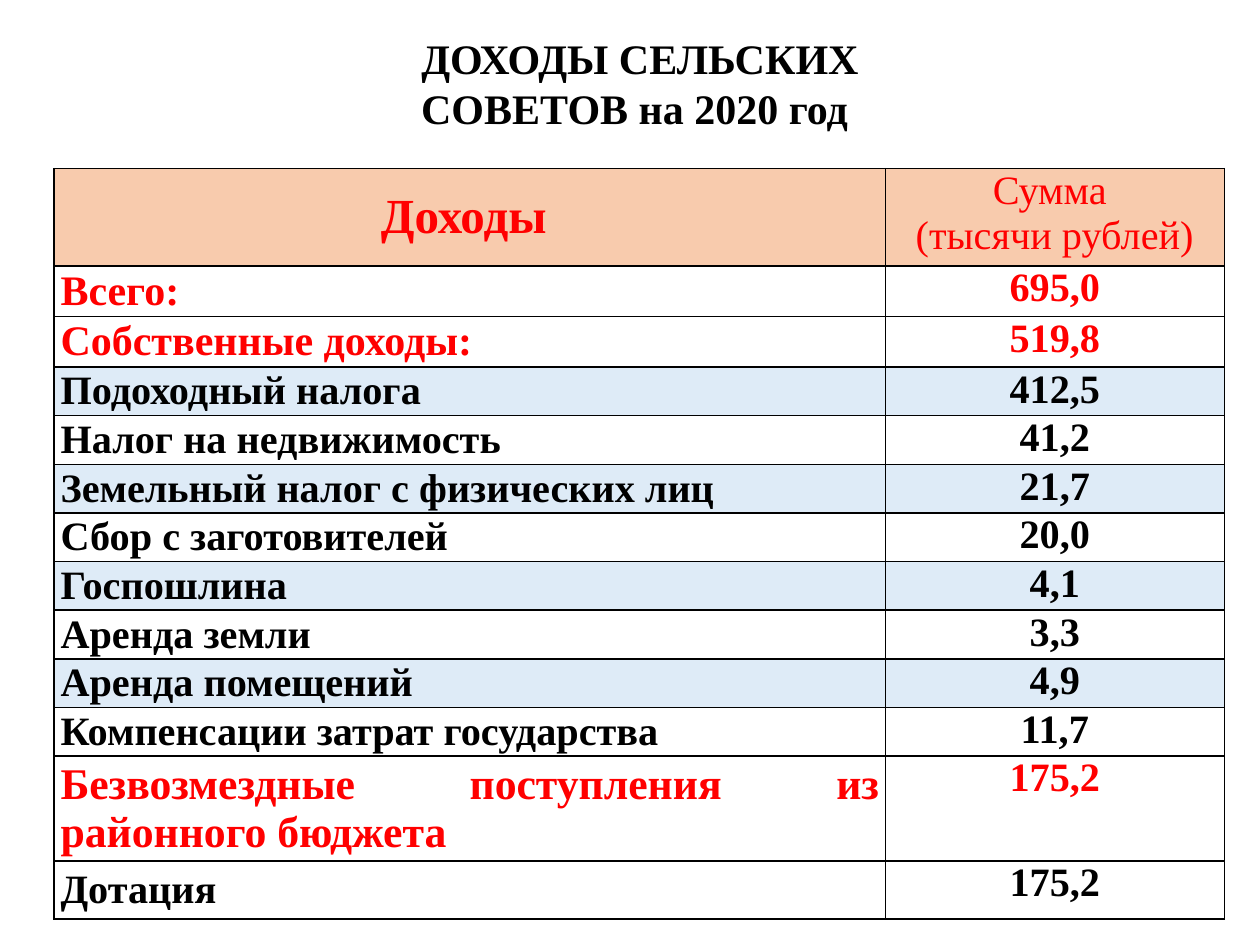
from dataclasses import dataclass

from lxml import etree
from pptx import Presentation
from pptx.dml.color import RGBColor
from pptx.enum.text import MSO_ANCHOR, MSO_AUTO_SIZE, PP_ALIGN
from pptx.oxml.ns import qn
from pptx.util import Cm, Pt

CENTER, JUSTIFY = PP_ALIGN.CENTER, PP_ALIGN.JUSTIFY
TOP, MIDDLE = MSO_ANCHOR.TOP, MSO_ANCHOR.MIDDLE
GROW = MSO_AUTO_SIZE.SHAPE_TO_FIT_TEXT

BLACK = RGBColor(0x00, 0x00, 0x00)
RED = RGBColor(0xFF, 0x00, 0x00)
WHITE = RGBColor(0xFF, 0xFF, 0xFF)
PEACH = RGBColor(0xF8, 0xCB, 0xAD)
BLUE = RGBColor(0xDE, 0xEB, 0xF7)

FONT = "Times New Roman"
WIDTHS = (16.76, 6.83)
SUM_SIZE = 23


@dataclass
class Row:
    label: str
    total: str
    color: RGBColor = BLACK
    fill: RGBColor = WHITE
    size: int = SUM_SIZE
    height: float = 0.98


ROWS = [
    Row("Всего:", "695,0", RED, size=24, height=1.02),
    Row("Собственные доходы:", "519,8", RED, size=24, height=1.02),
    Row("Подоходный налога", "412,5", fill=BLUE),
    Row("Налог на недвижимость", "41,2"),
    Row("Земельный налог с физических лиц", "21,7", fill=BLUE),
    Row("Сбор с заготовителей", "20,0"),
    Row("Госпошлина", "4,1", fill=BLUE),
    Row("Аренда земли", "3,3"),
    Row("Аренда помещений", "4,9", fill=BLUE),
    Row("Компенсации затрат государства", "11,7"),
    Row("Безвозмездные поступления из районного бюджета", "175,2",
        RED, size=25, height=2.1),
    Row("Дотация", "175,2", height=1.17),
]
HEAD = Row("Доходы ", "Сумма \n(тысячи рублей)", RED, PEACH, 28, 1.96)


def write(frame, text: str, size: int, color: RGBColor, align, bold: bool = True) -> None:
    frame.text = text
    for par in frame.paragraphs:
        par.alignment = align
        for run in par.runs:
            font = run.font
            font.name, font.size, font.bold = FONT, Pt(size), bold
            font.color.rgb = color


def frame_cell(cell) -> None:
    """Draw a thin black border on all four sides."""
    props = cell._tc.get_or_add_tcPr()
    for side in ("a:lnL", "a:lnR", "a:lnT", "a:lnB"):
        line = etree.SubElement(props, qn(side), w=str(Pt(1)))
        paint = etree.SubElement(line, qn("a:solidFill"))
        etree.SubElement(paint, qn("a:srgbClr"), val=str(BLACK))


def style(cell, fill: RGBColor, anchor) -> None:
    cell.margin_left = cell.margin_right = Cm(0.13)
    cell.margin_top = cell.margin_bottom = 0
    cell.vertical_anchor = anchor
    frame_cell(cell)
    cell.fill.solid()
    cell.fill.fore_color.rgb = fill


def add_title(slide) -> None:
    box = slide.shapes.add_textbox(Cm(6.55), Cm(0.53), Cm(12.7), Cm(2.31))
    frame = box.text_frame
    frame.word_wrap = True
    frame.auto_size = GROW
    write(frame, "ДОХОДЫ СЕЛЬСКИХ СОВЕТОВ на 2020 год ", 24, BLACK, CENTER)


def add_grid(slide) -> None:
    rows = [HEAD, *ROWS]
    tall = sum(row.height for row in rows)
    grid = slide.shapes.add_table(len(rows), len(WIDTHS), Cm(1.09), Cm(3.4),
                                  Cm(sum(WIDTHS)), Cm(tall)).table
    for col, width in zip(grid.columns, WIDTHS):
        col.width = Cm(width)
    for i, row in enumerate(rows):
        grid.rows[i].height = Cm(row.height)
        name, total = grid.cell(i, 0), grid.cell(i, 1)
        style(name, row.fill, MIDDLE)
        style(total, row.fill, TOP)
        head = row is HEAD
        write(name.text_frame, row.label, row.size, row.color,
              CENTER if head else JUSTIFY)
        write(total.text_frame, row.total, SUM_SIZE, row.color, CENTER, not head)


def main() -> None:
    deck = Presentation()
    deck.slide_width, deck.slide_height = Cm(25.4), Cm(19.05)
    slide = deck.slides.add_slide(deck.slide_layouts[6])
    add_title(slide)
    add_grid(slide)
    deck.save("out.pptx")


if __name__ == "__main__":
    main()
